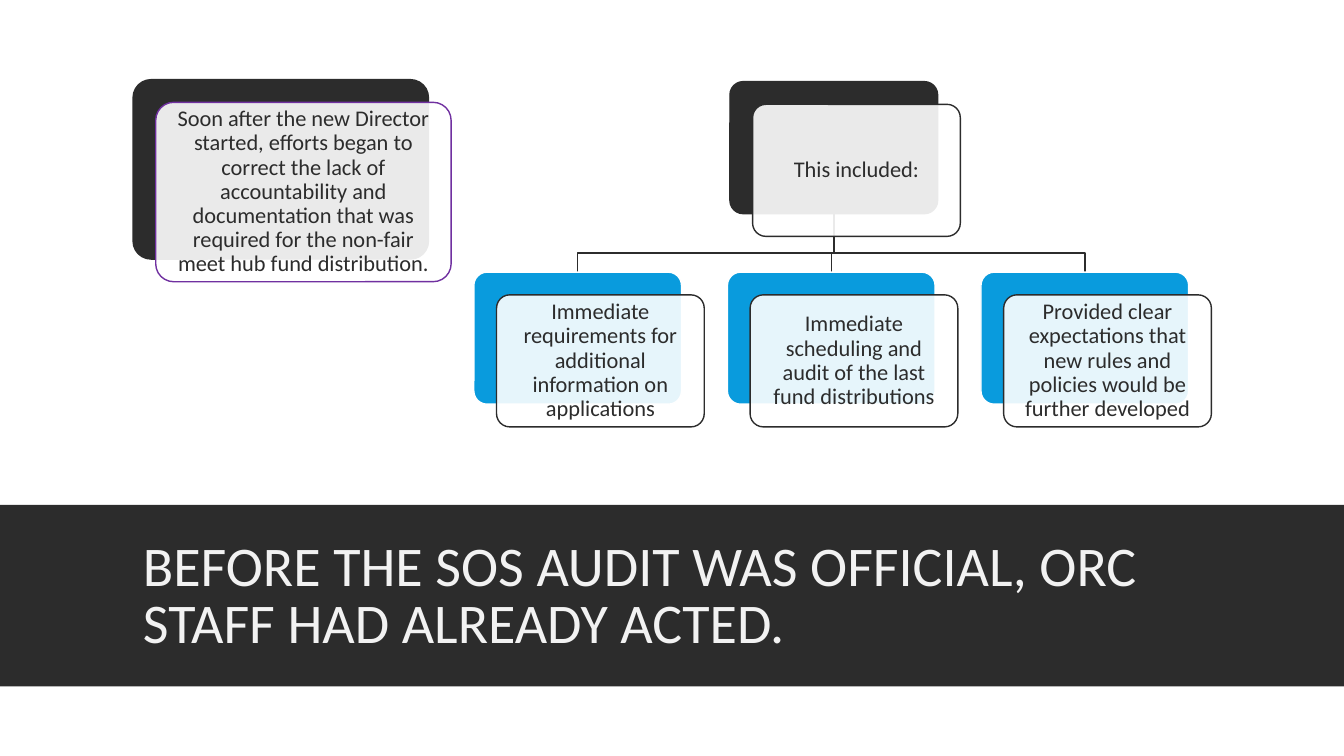
from pptx import Presentation
from pptx.dml.color import RGBColor
from pptx.enum.shapes import MSO_SHAPE
from pptx.enum.text import MSO_ANCHOR, PP_ALIGN
from pptx.oxml.ns import qn
from pptx.util import Inches, Pt
from lxml.etree import SubElement

THEME = {
    "dark": RGBColor.from_string("2C2C2C"),
    "blue": RGBColor.from_string("099BDD"),
    "purple": RGBColor.from_string("7030A0"),
    "white": RGBColor.from_string("FFFFFF"),
    "title": RGBColor.from_string("F2F2F2"),
    "font": "Calibri",
    "title_size": Pt(40),
    "card_size": Pt(16),
}


def write(holder, text, *, size, color, align, spacing, after, inset_x, inset_y):
    frame = holder.text_frame
    frame.word_wrap = True
    frame.vertical_anchor = MSO_ANCHOR.MIDDLE
    frame.margin_left = frame.margin_right = Inches(inset_x)
    frame.margin_top = frame.margin_bottom = Inches(inset_y)
    paragraph = frame.paragraphs[0]
    paragraph.alignment = align
    paragraph.line_spacing = spacing
    paragraph.space_after = Pt(after)
    run = paragraph.add_run()
    run.text = text
    run.font.name = THEME["font"]
    run.font.size = size
    run.font.color.rgb = color


def paint(shape, fill, line):
    shape.shadow.inherit = False
    if fill is None:
        shape.fill.background()
    else:
        shape.fill.solid()
        shape.fill.fore_color.rgb = fill
    shape.line.color.rgb = line
    shape.line.width = Pt(1)


prs = Presentation()
prs.slide_width = Inches(13.33)
prs.slide_height = Inches(7.5)
slide = prs.slides.add_slide(prs.slide_layouts[6])
slide.background.fill.solid()
slide.background.fill.fore_color.rgb = THEME["white"]
shapes = slide.shapes

band = shapes.add_shape(MSO_SHAPE.RECTANGLE, 0, Inches(5.01), prs.slide_width, Inches(1.8))
paint(band, THEME["dark"], THEME["dark"])
band.line.fill.background()

title = shapes.add_textbox(Inches(1.32), Inches(5.11), Inches(10.7), Inches(1.65))
write(title, "BEFORE THE SOS AUDIT WAS OFFICIAL, ORC STAFF HAD ALREADY ACTED.",
      size=THEME["title_size"], color=THEME["title"], align=PP_ALIGN.LEFT,
      spacing=0.85, after=6, inset_x=0.1, inset_y=0.05)

card_width, card_height = 2.06, 1.31
parent_left, parent_top = 7.24, 0.81
action_left, action_top, action_step = 4.7, 2.7, 2.515
actions = [
    "Immediate requirements for additional information on applications",
    "Immediate scheduling and audit of the last fund distributions",
    "Provided clear expectations that new rules and policies would be further developed",
]
cards = [
    ("Soon after the new Director started, efforts began to correct the lack of "
     "accountability and documentation that was required for the non-fair meet hub "
     "fund distribution.",
     1.32, 0.79, 2.93, 1.78, THEME["dark"], THEME["dark"], THEME["purple"]),
    ("This included:", parent_left, parent_top, card_width, card_height,
     THEME["dark"], THEME["dark"], THEME["dark"]),
]

trunk_x = parent_left + card_width / 2
trunk_top = parent_top + card_height
for index, action in enumerate(actions):
    left = action_left + index * action_step
    cards.append((action, left, action_top, card_width, card_height,
                  THEME["blue"], THEME["white"], THEME["dark"]))
    branch_x = left + card_width / 2
    route = [(trunk_x, 2.51), (branch_x, 2.51), (branch_x, action_top)]
    builder = shapes.build_freeform(Inches(trunk_x), Inches(trunk_top))
    builder.add_line_segments([(Inches(x), Inches(y)) for x, y in route], close=False)
    paint(builder.convert_to_shape(), None, THEME["dark"])

for text, left, top, width, height, back_fill, back_line, front_line in cards:
    for offset, fill, line in ((0, back_fill, back_line), (0.225, THEME["white"], front_line)):
        card = shapes.add_shape(MSO_SHAPE.ROUNDED_RECTANGLE, Inches(left + offset),
                                Inches(top + offset), Inches(width), Inches(height))
        card.adjustments[0] = 0.1
        paint(card, fill, line)
    front_color = card.fill._xPr.find(qn("a:solidFill"))[0]
    SubElement(front_color, qn("a:alpha"), val="90000")
    write(card, text, size=THEME["card_size"], color=THEME["dark"],
          align=PP_ALIGN.CENTER, spacing=0.9, after=5.6, inset_x=0.07, inset_y=0.07)

prs.save("out.pptx")
